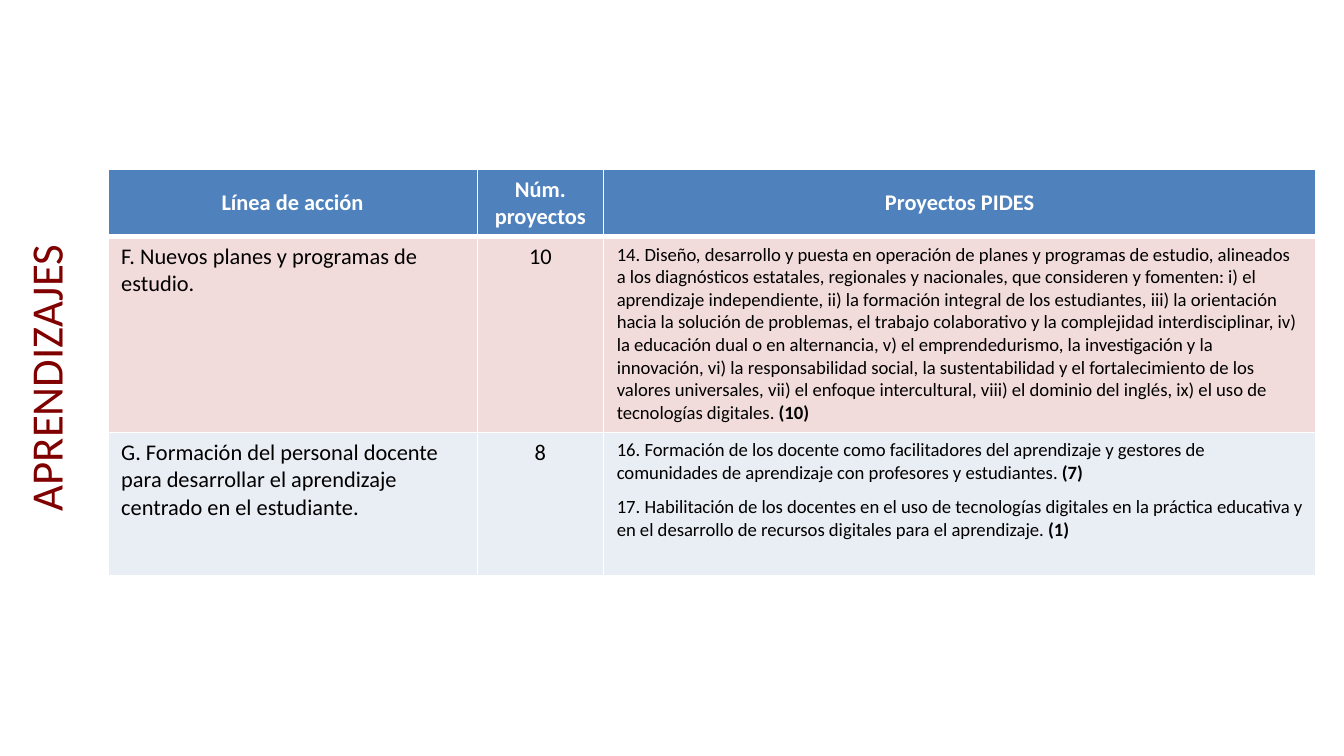
from pptx import Presentation
from pptx.dml.color import RGBColor
from pptx.enum.text import MSO_ANCHOR, PP_ALIGN
from pptx.oxml import parse_xml
from pptx.oxml.ns import nsdecls
from pptx.util import Pt

PX = 9525  # 96 px to the inch
WIDTH, HEIGHT = 960, 540
FONT = "Calibri"
WHITE, BLACK, MAROON = "FFFFFF", "000000", "800000"
COLS = [264, 90, 509]
ROWS = [48, 140, 102]
FILLS = ["4F81BD", "F2DCDB", "E9EDF4"]

HEADS = ["Línea de acción", "Núm. proyectos", "Proyectos PIDES"]
# Each line of action: name, count, projects as (text, count)
LINES = [
    ("F. Nuevos planes y programas de estudio.", "10", [
        ("14. Diseño, desarrollo y puesta en operación de planes y programas "
         "de estudio, alineados a los diagnósticos estatales, regionales y "
         "nacionales, que consideren y fomenten: i) el aprendizaje "
         "independiente, ii) la formación integral de los estudiantes, iii) "
         "la orientación hacia la solución de problemas, el trabajo "
         "colaborativo y la complejidad interdisciplinar, iv) la educación "
         "dual o en alternancia, v) el emprendedurismo, la investigación y "
         "la innovación, vi) la responsabilidad social, la sustentabilidad y "
         "el fortalecimiento de los valores universales, vii) el enfoque "
         "intercultural, viii) el dominio del inglés, ix) el uso de "
         "tecnologías digitales.", "(10)"),
    ]),
    ("G. Formación del personal docente para desarrollar el aprendizaje "
     "centrado en el estudiante.", "8", [
        ("16. Formación de los docente como facilitadores del aprendizaje y "
         "gestores de comunidades de aprendizaje con profesores y "
         "estudiantes.", "(7)"),
        ("17. Habilitación de los docentes en el uso de tecnologías digitales "
         "en la práctica educativa y en el desarrollo de recursos digitales "
         "para el aprendizaje.", "(1)"),
    ]),
]

LEFT = {"alignment": PP_ALIGN.LEFT}
MID = {"alignment": PP_ALIGN.CENTER}
LIST = {"alignment": PP_ALIGN.LEFT, "space_before": Pt(3), "space_after": Pt(3)}


def rgb(code):
    return RGBColor.from_string(code)


def apply(item, style):
    for key, value in style.items():
        setattr(item, key, value)


def write(para, text, size, color, bold=False):
    run = para.add_run()
    run.text = text
    apply(run.font, {"name": FONT, "size": Pt(size), "bold": bold})
    run.font.color.rgb = rgb(color)


def add_title(slide, text, left, top, width, height):
    box = slide.shapes.add_textbox(*(n * PX for n in (left, top, width, height)))
    box.rotation = 270
    frame = box.text_frame
    apply(frame, {"word_wrap": True, "vertical_anchor": MSO_ANCHOR.MIDDLE})
    para = frame.paragraphs[0]
    apply(para, MID)
    write(para, text, 24, MAROON)


def edge(cell, top, base):
    """Draw white borders, with the top and bottom ones of given points."""
    props = cell._tc.get_or_add_tcPr()
    for side, wide in zip("LRTB", (1, 1, top, base)):
        props.append(parse_xml(
            f'<a:ln{side} {nsdecls("a")} w="{Pt(wide)}"><a:solidFill>'
            f'<a:srgbClr val="{WHITE}"/></a:solidFill></a:ln{side}>'))


def fill_head(cell, text):
    cell.vertical_anchor = MSO_ANCHOR.MIDDLE
    para = cell.text_frame.paragraphs[0]
    apply(para, MID)
    write(para, text, 12, WHITE, True)


def fill_text(cell, text, style):
    para = cell.text_frame.paragraphs[0]
    apply(para, style)
    write(para, text, 12, BLACK)


def fill_list(cell, items):
    frame = cell.text_frame
    for i, (text, count) in enumerate(items):
        para = frame.add_paragraph() if i else frame.paragraphs[0]
        apply(para, LIST)
        write(para, text + " ", 10, BLACK)
        write(para, count, 10, BLACK, True)


def add_grid(slide, left, top):
    size = sum(COLS) * PX, sum(ROWS) * PX
    grid = slide.shapes.add_table(
        len(ROWS), len(COLS), left * PX, top * PX, *size).table
    grid.horz_banding = False
    for col, width in zip(grid.columns, COLS):
        col.width = width * PX
    for i, (row, height) in enumerate(zip(grid.rows, ROWS)):
        row.height = height * PX
        for cell in row.cells:
            edge(cell, 3 if i == 1 else 1, 1 if i else 3)
            cell.fill.solid()
            cell.fill.fore_color.rgb = rgb(FILLS[i])
    for cell, text in zip(grid.rows[0].cells, HEADS):
        fill_head(cell, text)
    for i, (name, count, items) in enumerate(LINES, 1):
        fill_text(grid.cell(i, 0), name, LEFT)
        fill_text(grid.cell(i, 1), count, MID)
        fill_list(grid.cell(i, 2), items)


def main():
    deck = Presentation()
    apply(deck, {"slide_width": WIDTH * PX, "slide_height": HEIGHT * PX})
    slide = deck.slides.add_slide(deck.slide_layouts[6])
    add_title(slide, "APRENDIZAJES", -238, 225, HEIGHT, 90)
    add_grid(slide, 77, 121)
    deck.save("out.pptx")


if __name__ == "__main__":
    main()
